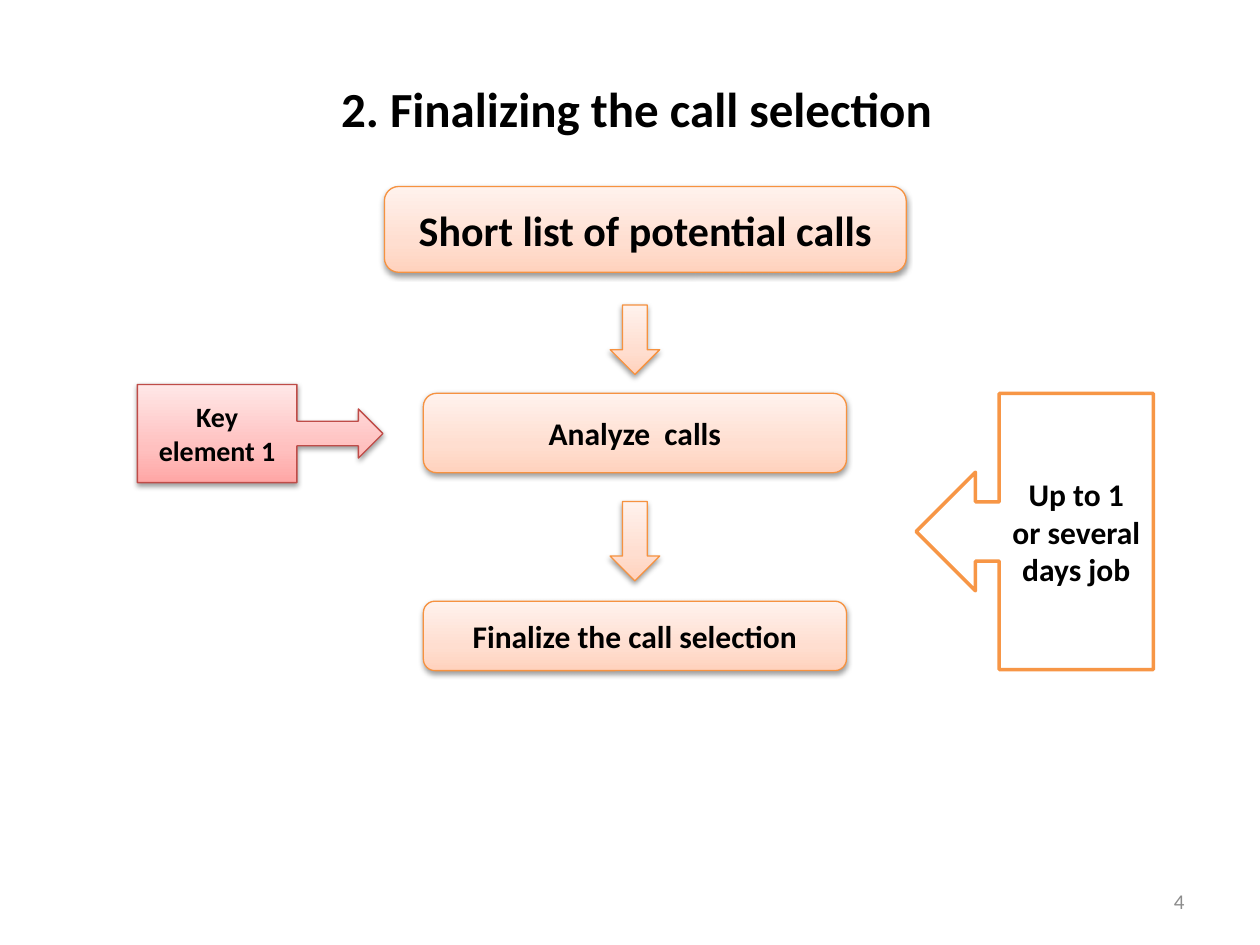
import copy

import pptx
import pptx.dml.color
import pptx.enum.shapes
import pptx.enum.text
import pptx.oxml
import pptx.oxml.ns
import pptx.util

Cm = pptx.util.Cm
Pt = pptx.util.Pt
RGBColor = pptx.dml.color.RGBColor
SHAPE = pptx.enum.shapes.MSO_SHAPE
ALIGN = pptx.enum.text.PP_ALIGN
qn = pptx.oxml.ns.qn

BLACK = RGBColor(0x00, 0x00, 0x00)
WHITE = RGBColor(0xFF, 0xFF, 0xFF)
GREY = RGBColor(0x8C, 0x8C, 0x8C)
ORANGE = RGBColor(0xF7, 0x96, 0x46)
ORANGE_EDGE = RGBColor(0xF6, 0x92, 0x40)
RED_EDGE = RGBColor(0xBF, 0x4C, 0x48)
PEACH = (RGBColor(0xFF, 0xD2, 0xBD), RGBColor(0xFF, 0xDE, 0xD0), RGBColor(0xFF, 0xF2, 0xED))
PINK = (RGBColor(0xFF, 0xA6, 0xA5), RGBColor(0xFF, 0xC0, 0xBF), RGBColor(0xFF, 0xE7, 0xE7))
STOPS = (0, 0.35, 1)

SHADOW = (
    '<a:outerShdw xmlns:a="http://schemas.openxmlformats.org/drawingml/2006/main" '
    'blurRad="40000" dist="20000" dir="5400000" rotWithShape="0">'
    '<a:srgbClr val="000000"><a:alpha val="38000"/></a:srgbClr></a:outerShdw>'
)


def write(frame, words, size, color=BLACK, bold=True, align=ALIGN.CENTER):
    frame.word_wrap = True
    frame.vertical_anchor = pptx.enum.text.MSO_ANCHOR.MIDDLE
    para = frame.paragraphs[0]
    para.alignment = align
    span = para.add_run()
    span.text = words
    span.font.name = "Calibri"
    span.font.size = Pt(size)
    span.font.bold = bold
    span.font.color.rgb = color


def add_outlined(page, kind, box, edge, weight):
    shape = page.shapes.add_shape(kind, *map(Cm, box))
    shape.shadow.inherit = False
    shape.line.color.rgb = edge
    shape.line.width = Pt(weight)
    return shape


def add_raised(page, kind, box, colors=PEACH, edge=ORANGE_EDGE):
    """Add a shape with a three-stop vertical gradient and a soft shadow."""
    shape = add_outlined(page, kind, box, edge, 0.75)
    shape.fill.gradient()
    shape.fill.gradient_angle = 90
    properties = shape._element.spPr
    stop_list = properties.find(qn("a:gradFill")).find(qn("a:gsLst"))
    stop_list.insert(1, copy.deepcopy(stop_list[0]))
    for stop, position, color in zip(shape.fill.gradient_stops, STOPS, colors):
        stop.position = position
        stop.color.rgb = color
    properties.find(qn("a:effectLst")).append(pptx.oxml.parse_xml(SHADOW))
    return shape


def add_title(page, box):
    title = page.shapes.title
    title.left, title.top, title.width, title.height = map(Cm, box)
    write(title.text_frame, "2. Finalizing the call selection", 28)


def add_flow(page, box):
    """Stack the steps down the box, with the arrows on its centre line."""
    left, top, width, height = box
    center = left + width / 2
    # words, text size, shift from centre, offset from top, width, height
    steps = (
        ("Short list of potential calls", 24, 0.21, 0, 10.52, 1.73),
        ("Analyze  calls", 18, 0, 4.17, 8.53, 1.6),
        ("Finalize the call selection", 18, 0, height - 1.4, 8.53, 1.4),
    )
    for words, size, shift, offset, step_width, step_height in steps:
        step_box = (center + shift - step_width / 2, top + offset, step_width, step_height)
        step = add_raised(page, SHAPE.ROUNDED_RECTANGLE, step_box)
        write(step.text_frame, words, size)
    for offset, length in ((2.39, 1.4), (6.35, 1.6)):
        add_raised(page, SHAPE.DOWN_ARROW, (center - 0.5, top + offset, 1, length))


def add_duration(page, box):
    callout = add_outlined(page, SHAPE.LEFT_ARROW_CALLOUT, box, ORANGE, 2)
    callout.fill.solid()
    callout.fill.fore_color.rgb = WHITE
    write(callout.text_frame, "Up to 1 or several days job", 18)


def add_key_element(page, box):
    callout = add_raised(page, SHAPE.RIGHT_ARROW_CALLOUT, box, PINK, RED_EDGE)
    write(callout.text_frame, "Key element 1", 16)


def add_page_number(page, box):
    number = page.shapes.add_textbox(*map(Cm, box))
    write(number.text_frame, "4", 12, GREY, False, ALIGN.RIGHT)


def main():
    deck = pptx.Presentation()
    deck.slide_width, deck.slide_height = Cm(25.4), Cm(19.05)
    page = deck.slides.add_slide(deck.slide_layouts.get_by_name("Title Only"))
    add_title(page, (1.4, 0.58, 22.86, 3.18))
    add_flow(page, (7.54, 3.76, 10.52, 9.76))
    add_duration(page, (18.47, 7.93, 4.78, 5.57))
    add_key_element(page, (2.77, 7.75, 4.95, 1.98))
    add_page_number(page, (18.21, 17.65, 5.92, 1.02))
    deck.save("out.pptx")


if __name__ == "__main__":
    main()
